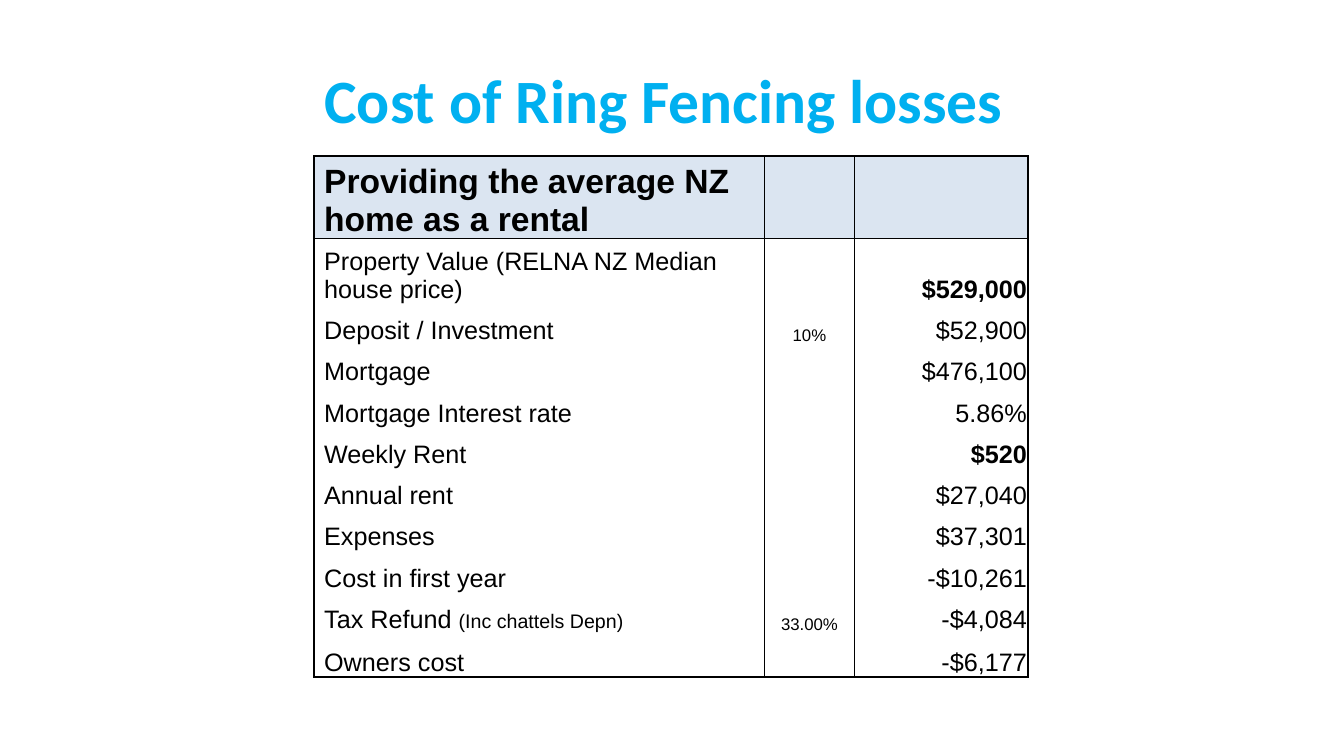
from lxml import etree
from pptx import Presentation
from pptx import util as u
from pptx.dml.color import RGBColor
from pptx.enum import text
from pptx.oxml import ns

COLORS = {"title": "00B0F0", "text": "000000", "line": "000000", "header": "DBE5F1"}
NO_STYLE = "{2D5ABB26-0587-4C30-8999-92F81FD0307C}"
THIN, THICK = 1, 1.5
COLUMN_WIDTHS = [11.35, 2.26, 4.37]
ROW_HEIGHTS = [2.06, 1.65] + [1.04] * 8 + [1.09]
ALIGNMENTS = [text.PP_ALIGN.LEFT, text.PP_ALIGN.CENTER, text.PP_ALIGN.RIGHT]
SIZES = [18, 12, 18]
BOLD_VALUES = {"$529,000", "$520"}

HEADING = ("Providing the average NZ home as a rental", "", "")
COSTS = [
    ("Property Value (RELNA NZ Median house price)", "", "$529,000"),
    ("Deposit / Investment", "10%", "$52,900"),
    ("Mortgage", "", "$476,100"),
    ("Mortgage Interest rate", "", "5.86%"),
    ("Weekly Rent", "", "$520"),
    ("Annual rent", "", "$27,040"),
    ("Expenses", "", "$37,301"),
    ("Cost in first year", "", "-$10,261"),
    ("Tax Refund |(Inc chattels Depn)", "33.00%", "-$4,084"),  # small print after the bar
    ("Owners cost", "", "-$6,177"),
]


def style_font(font, name, size, color, bold):
    font.name, font.size, font.bold = name, u.Pt(size), bold
    font.color.rgb = RGBColor.from_string(COLORS[color])


def add_title(page, box):
    title = page.shapes.title
    title.left, title.top, title.width, title.height = [u.Cm(length) for length in box]
    frame = title.text_frame
    frame.vertical_anchor = text.MSO_ANCHOR.MIDDLE
    frame.text = "Cost of Ring Fencing losses"
    para = frame.paragraphs[0]
    para.alignment = text.PP_ALIGN.LEFT
    style_font(para.font, "Calibri", 44, "title", True)


def set_borders(cell, widths):
    """Widths in points for left, right, top and bottom; 0 means no line."""
    properties = cell._tc.get_or_add_tcPr()
    for index, (side, width) in enumerate(zip("LRTB", widths)):
        line = etree.Element(ns.qn(f"a:ln{side}"), w=str(u.Pt(width)))
        if width:
            fill = etree.SubElement(line, ns.qn("a:solidFill"))
            etree.SubElement(fill, ns.qn("a:srgbClr"), val=COLORS["line"])
        else:
            etree.SubElement(line, ns.qn("a:noFill"))
        properties.insert(index, line)


def fill_cell(cell, words, column, heading):
    cell.margin_left = cell.margin_top = cell.margin_right = u.Cm(0.02)
    cell.margin_bottom = 0
    cell.vertical_anchor = text.MSO_ANCHOR.BOTTOM
    if heading:
        cell.fill.solid()
        cell.fill.fore_color.rgb = RGBColor.from_string(COLORS["header"])
    else:
        cell.fill.background()

    para = cell.text_frame.paragraphs[0]
    para.alignment = ALIGNMENTS[column]
    if column == 0:
        para._p.get_or_add_pPr().set("marL", str(u.Cm(0.23)))
    size = 24 if heading else SIZES[column]
    style_font(para.font, "Arial", size, "text", heading or words in BOLD_VALUES)
    main, _, small = words.partition("|")
    if main:
        para.add_run().text = main
    if small:
        span = para.add_run()
        span.text = small
        span.font.size = u.Pt(14)


def add_cost_table(page, box):
    rows = [HEADING] + COSTS
    last_row, last_column = len(rows) - 1, len(COLUMN_WIDTHS) - 1
    frame = page.shapes.add_table(len(rows), len(COLUMN_WIDTHS), *[u.Cm(length) for length in box])
    table = frame.table
    table.first_row = table.horz_banding = False
    table._tbl.tblPr.find(ns.qn("a:tableStyleId")).text = NO_STYLE
    for column, width in zip(table.columns, COLUMN_WIDTHS):
        column.width = u.Cm(width)
    for row, height in zip(table.rows, ROW_HEIGHTS):
        row.height = u.Cm(height)

    # Thick frame, thin column dividers and a thin rule below the heading
    for r, row in enumerate(rows):
        top = {0: THICK, 1: THIN}.get(r, 0)
        bottom = {0: THIN, last_row: THICK}.get(r, 0)
        for c, words in enumerate(row):
            cell = table.cell(r, c)
            fill_cell(cell, words, c, heading=r == 0)
            left = THICK if c == 0 else THIN
            right = THICK if c == last_column else THIN
            set_borders(cell, (left, right, top, bottom))


def main():
    deck = Presentation()
    deck.slide_width, deck.slide_height = u.Cm(33.87), u.Cm(19.05)
    page = deck.slides.add_slide(deck.slide_layouts[5])
    add_title(page, (7.92, 0.91, 20.47, 3.18))
    add_cost_table(page, (7.92, 3.94, sum(COLUMN_WIDTHS), sum(ROW_HEIGHTS)))
    deck.save("out.pptx")


if __name__ == "__main__":
    main()
